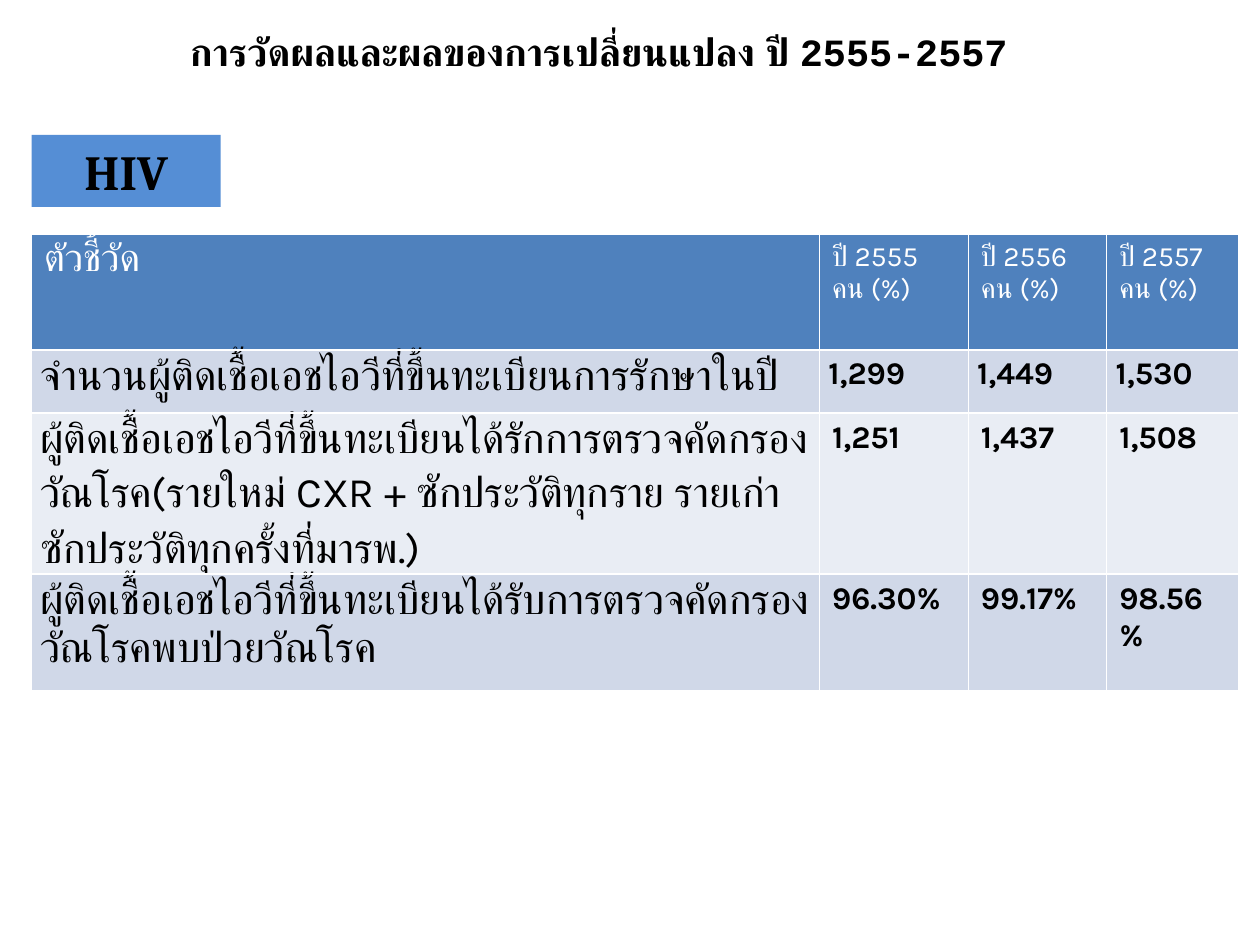
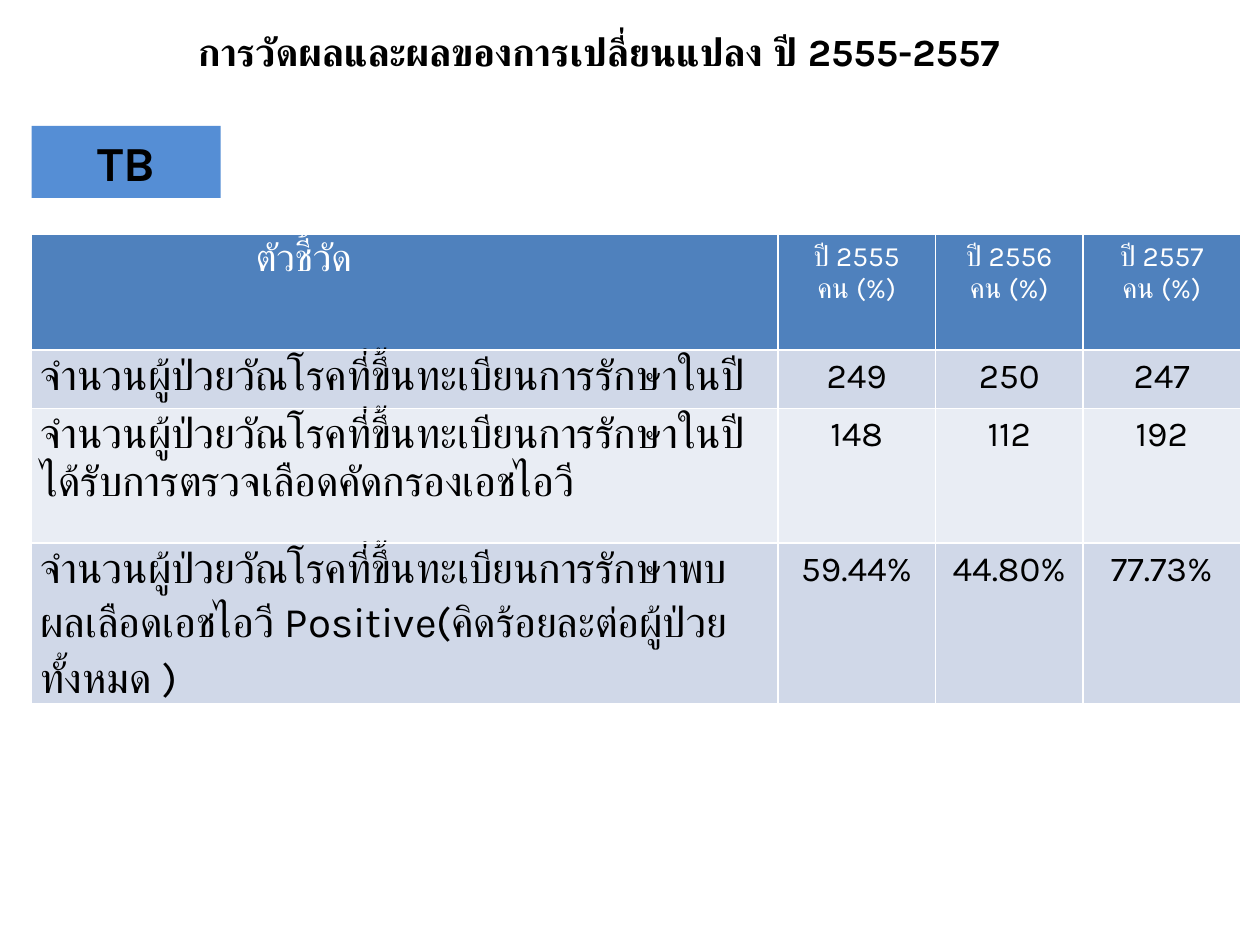
from pptx import Presentation
from pptx import util as u
from pptx.dml.color import RGBColor
from pptx.enum import shapes, text

HEX = {"head": "4F81BD", "odd": "D0D8E8", "even": "E9EDF4",
       "tag": "558ED5", "ink": "000000", "white": "FFFFFF"}
TITLE = "การวัดผลและผลของการเปลี่ยนแปลง ปี 2555-2557"
YEARS = ["ปี 2555\nคน (%)", "ปี 2556\nคน (%)", "ปี 2557\nคน (%)"]
LEFT, PAD = u.Cm(0.64), u.Cm(0.18)
MID, START = text.PP_ALIGN.CENTER, text.PP_ALIGN.LEFT

# What differs between the two slides
PAGES = [
    {"tag": "HIV", "top": 2.72, "title font": "Courier New", "tag font": "Cambria",
     "cols": [15.88, 3, 2.79, 2.67], "rows": [2.34, 1.27, 2.34, 2.34],
     "indent": 0.25, "align": START, "num": {"size": 18, "bold": True},
     "tight": [1],  # rows whose figures have narrow margins
     "data": [
         ["จำนวนผู้ติดเชื้อเอชไอวีที่ขึ้นทะเบียนการรักษาในปี",
          "1,299", "1,449", "1,530"],
         ["ผู้ติดเชื้อเอชไอวีที่ขึ้นทะเบียนได้รักการตรวจคัดกรองวัณโรค"
          "(รายใหม่ CXR + ซักประวัติทุกราย รายเก่าซักประวัติทุกครั้งที่มารพ.)",
          "1,251", "1,437", "1,508"],
         ["ผู้ติดเชื้อเอชไอวีที่ขึ้นทะเบียนได้รับการตรวจคัดกรองวัณโรคพบป่วยวัณโรค",
          "96.30%", "99.17%", "98.56%"]]},
    {"tag": "TB", "top": 2.54, "title font": "Karla", "tag font": "Karla",
     "cols": [15.04, 3.18, 2.97, 3.18], "rows": [2.34, 1.17, 2.72, 2.34],
     "indent": 4.52, "align": MID, "num": {"size": 20, "bold": False},
     "tight": [1, 2, 3],
     "data": [
         ["จำนวนผู้ป่วยวัณโรคที่ขึ้นทะเบียนการรักษาในปี", "249", "250", "247"],
         ["จำนวนผู้ป่วยวัณโรคที่ขึ้นทะเบียนการรักษาในปีได้รับการตรวจเลือดคัดกรองเอชไอวี",
          "148", "112", "192"],
         ["จำนวนผู้ป่วยวัณโรคที่ขึ้นทะเบียนการรักษาพบผลเลือดเอชไอวี "
          "Positive(คิดร้อยละต่อผู้ป่วยทั้งหมด )",
          "59.44%", "44.80%", "77.73%"]]},
]


def paint(part, key):
    part.fill.solid()
    part.fill.fore_color.rgb = RGBColor.from_string(HEX[key])


def style(frame, form, ink="ink", align=MID, gap=None):
    for para in frame.paragraphs:
        para.alignment, para.line_spacing = align, gap
        for run in para.runs:
            run.font.color.rgb = RGBColor.from_string(HEX[ink])
            for name, val in form.items():
                setattr(run.font, name, u.Pt(val) if name == "size" else val)


prs = Presentation()
prs.slide_width, prs.slide_height = u.Cm(25.4), u.Cm(19.05)

for page in PAGES:
    slide = prs.slides.add_slide(prs.slide_layouts[5])

    # Title
    title = slide.shapes.title
    place = {"left": LEFT, "top": u.Cm(0.43), "width": u.Cm(22.86), "height": u.Cm(1.7)}
    for name, val in place.items():
        setattr(title, name, val)
    frame = title.text_frame
    frame.text = TITLE
    frame.auto_size = text.MSO_AUTO_SIZE.NONE
    frame.vertical_anchor = text.MSO_ANCHOR.TOP
    style(frame, {"name": page["title font"], "size": 22, "bold": True})

    # Disease tag
    tag = slide.shapes.add_shape(shapes.MSO_SHAPE.RECTANGLE, LEFT, u.Cm(page["top"]),
                                 u.Cm(3.81), u.Cm(1.45))
    tag.shadow.inherit = False
    tag.line.fill.background()
    paint(tag, "tag")
    tag.text_frame.text = page["tag"]
    style(tag.text_frame, {"name": page["tag font"], "size": 28, "bold": True})

    # Table of indicators; its default style draws the white borders
    cols, rows = page["cols"], page["rows"]
    grid = slide.shapes.add_table(len(rows), len(cols), LEFT, u.Cm(4.72),
                                  u.Cm(sum(cols)), u.Cm(sum(rows))).table
    for col, wide in zip(grid.columns, cols):
        col.width = u.Cm(wide)
    for row, high in zip(grid.rows, rows):
        row.height = u.Cm(high)

    for r, line in enumerate([["ตัวชี้วัด", *YEARS], *page["data"]]):
        for c, word in enumerate(line):
            cell = grid.cell(r, c)
            cell.text = word
            form = {"name": "Karla", "size": 24, "bold": False}
            align = page["align"] if c else START
            if r == 0:
                paint(cell, "head")
                form["size"] = 16 if c else 22
                if c == 0:
                    cell.margin_left = u.Cm(page["indent"])
                style(cell.text_frame, form, "white", align)
                continue
            paint(cell, "odd" if r % 2 else "even")
            if c:
                form.update(page["num"])
            tight = c == 0 or r in page["tight"]
            if tight:
                cell.margin_left = cell.margin_right = PAD
                cell.margin_top = cell.margin_bottom = 0
            style(cell.text_frame, form, "ink", align, 1.15 if tight else None)

prs.save("out.pptx")
